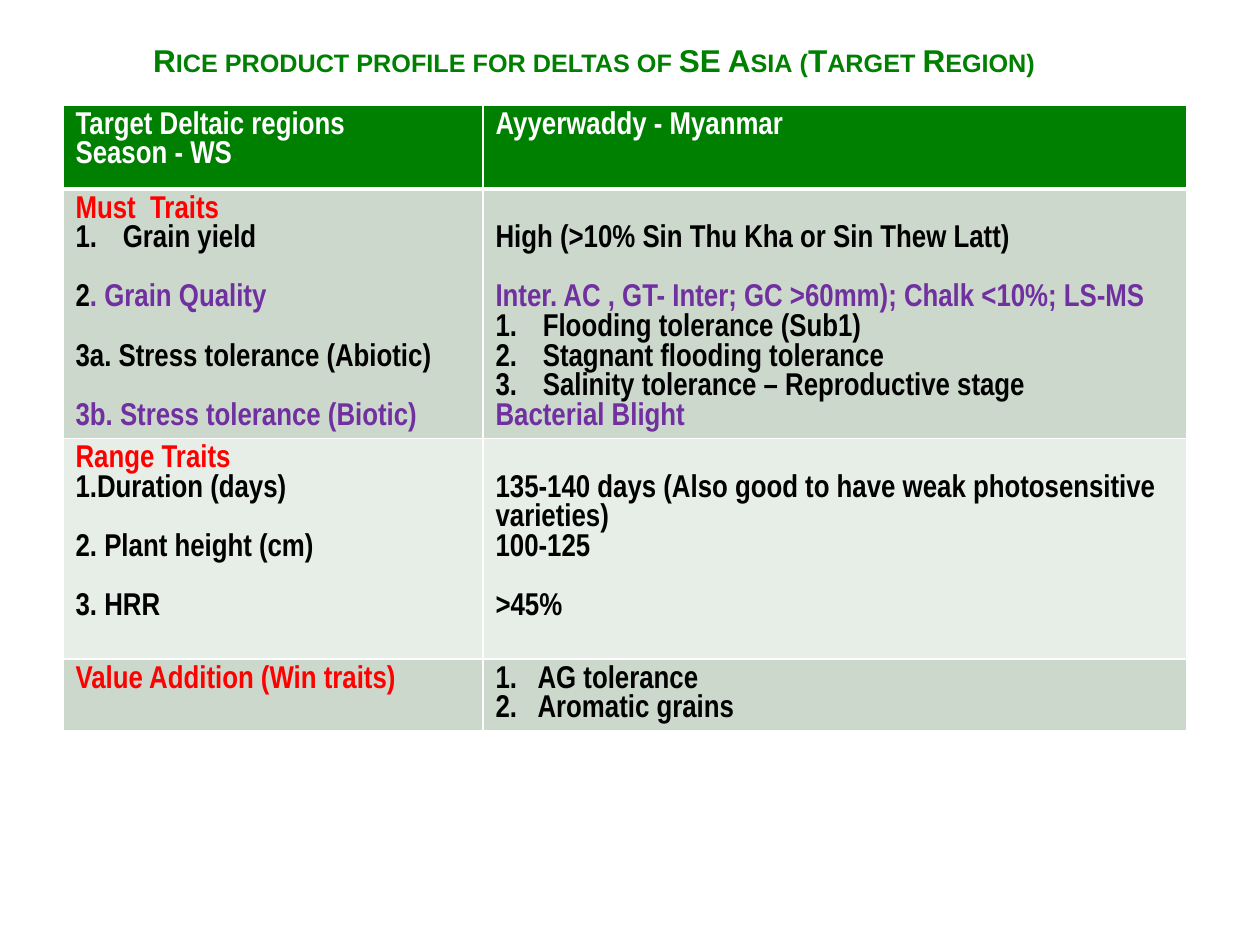
from dataclasses import dataclass

from lxml import etree
from pptx import Presentation
from pptx.dml.color import RGBColor
from pptx.enum.text import MSO_ANCHOR, MSO_AUTO_SIZE, PP_ALIGN
from pptx.oxml.ns import qn
from pptx.util import Pt

TOP, MIDDLE = MSO_ANCHOR.TOP, MSO_ANCHOR.MIDDLE
LEFT = PP_ALIGN.LEFT
NO_AUTOFIT = MSO_AUTO_SIZE.NONE


@dataclass(frozen=True)
class Theme:
    green: str = "008000"
    white: str = "FFFFFF"
    black: str = "000000"
    red: str = "FF0000"
    purple: str = "7030A0"
    band_dark: str = "CCD8CC"
    band_light: str = "E7EDE7"
    title_font: str = "Arial"
    table_font: str = "Arial Narrow"
    size: float = 18
    line_spacing: float = 1.0
    line_height: float = 16.9
    margin_x: float = 7.2
    margin_y: float = 3.6
    rule: float = 1
    header_rule: float = 3


T = Theme()


@dataclass(frozen=True)
class Line:
    text: str
    color: str = T.black
    gap: int = 0  # lines left free above
    numbered: bool = False
    hang: float = 0  # hanging indent
    lead: str = ""  # black text ahead of the coloured text


@dataclass(frozen=True)
class Row:
    height: float
    fill: str
    cells: tuple[list[Line], list[Line]]


COLUMNS = (240, 402)
ROWS = [
    Row(48, T.green, (
        [Line("Target Deltaic regions", T.white), Line("Season - WS", T.white)],
        [Line("Ayyerwaddy - Myanmar", T.white)],
    )),
    Row(142, T.band_dark, (
        [
            Line("Must  Traits", T.red),
            Line("Grain yield", numbered=True, hang=27),
            Line(". Grain Quality", T.purple, gap=1, lead="2"),
            Line("3a. Stress tolerance (Abiotic)", gap=1),
            Line("3b. Stress tolerance (Biotic)", T.purple, gap=1),
        ],
        [
            Line("High (>10% Sin Thu Kha or Sin Thew Latt)", gap=1),
            Line("Inter. AC , GT- Inter; GC >60mm); Chalk <10%; LS-MS", T.purple, gap=1),
            Line("Flooding tolerance (Sub1)", numbered=True, hang=27),
            Line("Stagnant flooding tolerance", numbered=True, hang=27),
            Line("Salinity tolerance – Reproductive stage", numbered=True, hang=27),
            Line("Bacterial Blight", T.purple),
        ],
    )),
    Row(126, T.band_light, (
        [
            Line("Range Traits", T.red),
            Line("Duration (days)", numbered=True),
            Line("2. Plant height (cm)", gap=1),
            Line("3. HRR", gap=1),
        ],
        [
            Line("135-140 days (Also good to have weak photosensitive varieties)", gap=1),
            Line("100-125"),
            Line(">45%", gap=1),
        ],
    )),
    Row(41, T.band_dark, (
        [Line("Value Addition (Win traits)", T.red)],
        [
            Line("AG tolerance", numbered=True, hang=24),
            Line("Aromatic grains", numbered=True, hang=24),
        ],
    )),
]


def style_run(r, font: str, color: str) -> None:
    r.font.name = font
    r.font.size = Pt(T.size)
    r.font.bold = True
    r.font.color.rgb = RGBColor.from_string(color)


def add_title(s, text: str) -> None:
    sp = s.shapes.title
    sp.left, sp.top, sp.width, sp.height = Pt(76.3), Pt(16.2), Pt(541.4), Pt(36)
    tf = sp.text_frame
    tf.text = text
    tf.auto_size = NO_AUTOFIT
    tf.vertical_anchor = MIDDLE
    tf.margin_left = Pt(11.2)
    p = tf.paragraphs[0]
    p.alignment = LEFT
    r = p.runs[0]
    style_run(r, T.title_font, T.green)
    r.font._element.set("cap", "small")


def set_borders(cell, bottom: float, top: float) -> None:
    tc_pr = cell._tc.get_or_add_tcPr()
    for side, width in (("L", T.rule), ("R", T.rule), ("T", top), ("B", bottom)):
        ln = etree.SubElement(tc_pr, qn(f"a:ln{side}"), w=str(Pt(width)))
        fill = etree.SubElement(ln, qn("a:solidFill"))
        etree.SubElement(fill, qn("a:srgbClr"), val=T.white)


def write_line(p, line: Line, first: bool) -> None:
    p.alignment = LEFT
    p.line_spacing = T.line_spacing
    if line.gap and not first:
        p.space_before = Pt(line.gap * T.line_height)
    if line.numbered:
        p_pr = p._p.get_or_add_pPr()
        p_pr.set("marL", str(Pt(line.hang)))
        p_pr.set("indent", str(-Pt(line.hang)))
        etree.SubElement(p_pr, qn("a:buAutoNum"), type="arabicPeriod")
    for text, color in ((line.lead, T.black), (line.text, line.color)):
        if text:
            r = p.add_run()
            r.text = text
            style_run(r, T.table_font, color)


def fill_cell(cell, lines: list[Line], fill: str) -> None:
    """Write the lines; free lines above the first one become top margin."""
    cell.fill.solid()
    cell.fill.fore_color.rgb = RGBColor.from_string(fill)
    cell.vertical_anchor = TOP
    cell.margin_left = cell.margin_right = Pt(T.margin_x)
    cell.margin_top = Pt(T.margin_y + lines[0].gap * T.line_height)
    cell.margin_bottom = Pt(T.margin_y)
    tf = cell.text_frame
    for i, line in enumerate(lines):
        p = tf.add_paragraph() if i else tf.paragraphs[0]
        write_line(p, line, first=i == 0)


def add_trait_table(s) -> None:
    height = sum(row.height for row in ROWS)
    table = s.shapes.add_table(len(ROWS), len(COLUMNS), Pt(36), Pt(60),
                               Pt(sum(COLUMNS)), Pt(height)).table
    for column, width in zip(table.columns, COLUMNS):
        column.width = Pt(width)
    for i, row in enumerate(ROWS):
        table.rows[i].height = Pt(row.height)
        for j, lines in enumerate(row.cells):
            cell = table.cell(i, j)
            set_borders(cell, bottom=T.header_rule if i == 0 else T.rule,
                        top=T.header_rule if i == 1 else T.rule)
            fill_cell(cell, lines, row.fill)


def main() -> None:
    prs = Presentation()
    prs.slide_width, prs.slide_height = Pt(720), Pt(540)
    s = prs.slides.add_slide(prs.slide_layouts[5])
    add_title(s, "Rice product profile for deltas of SE Asia (Target Region)")
    add_trait_table(s)
    prs.save("out.pptx")


if __name__ == "__main__":
    main()
